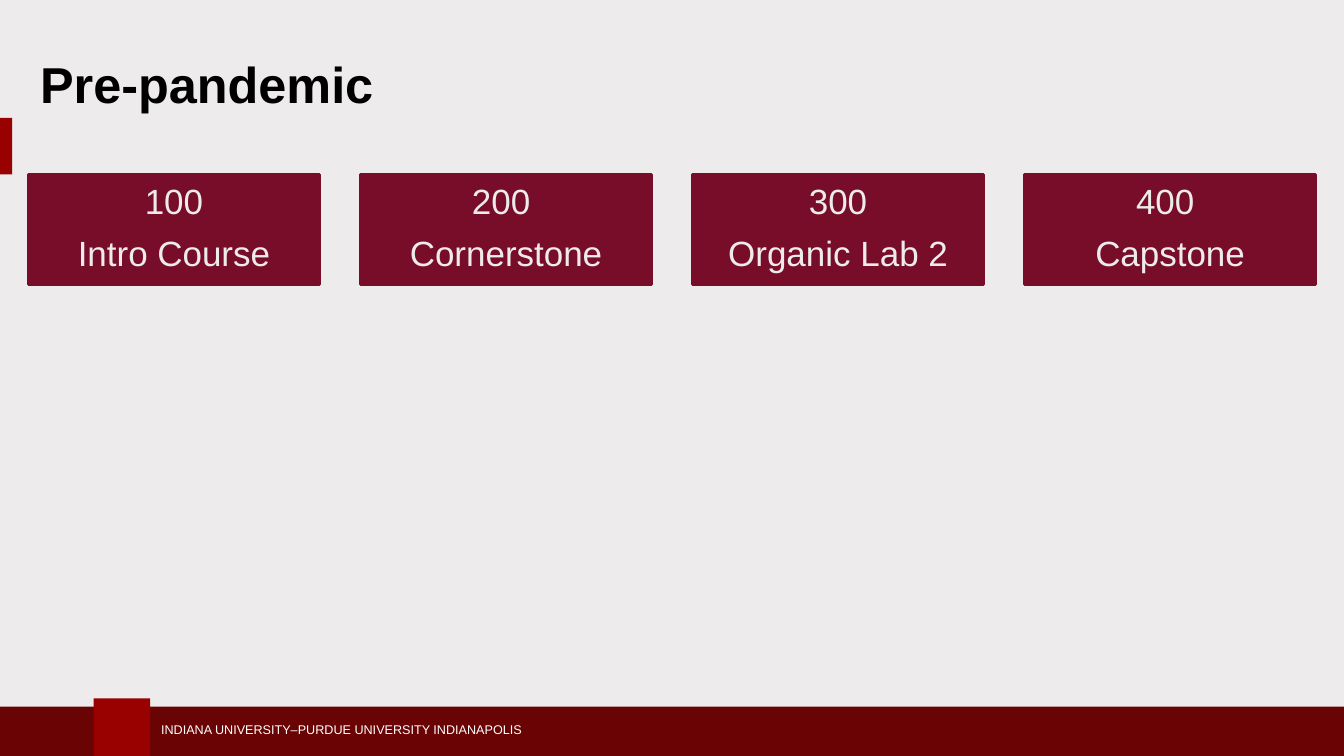
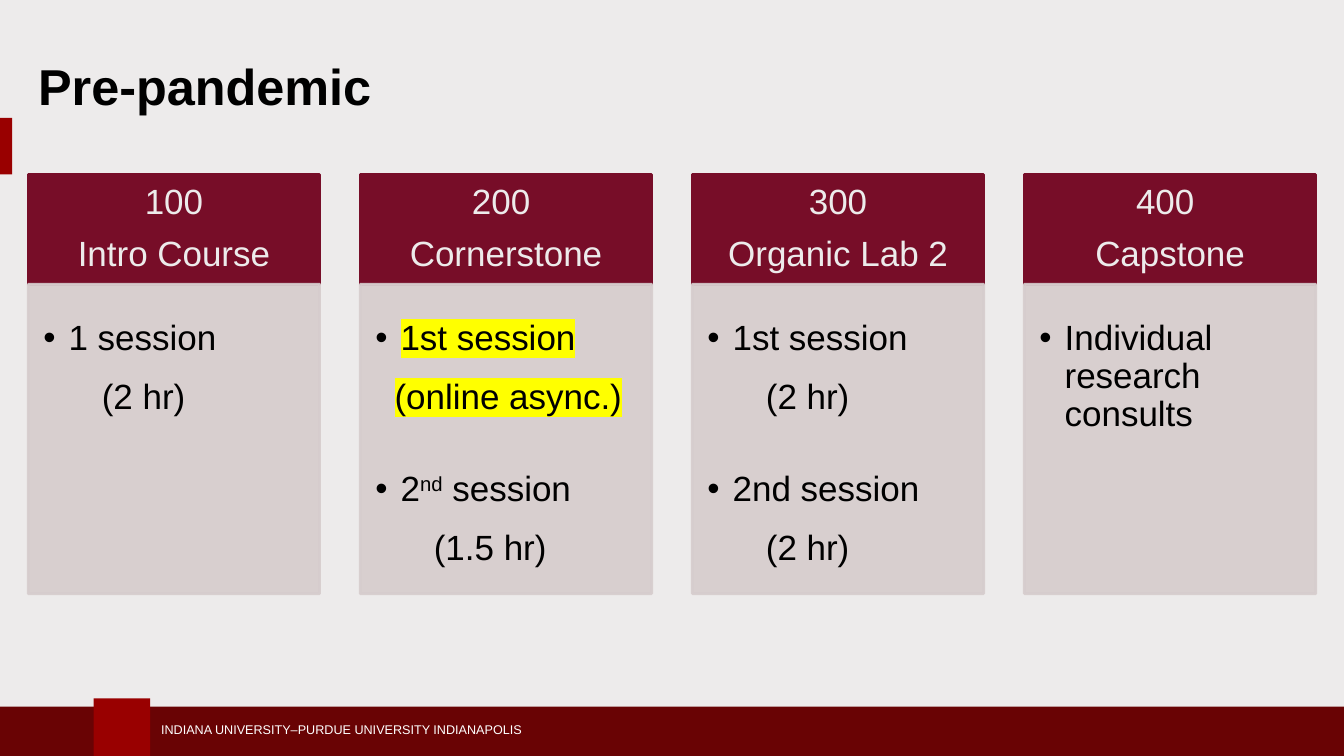
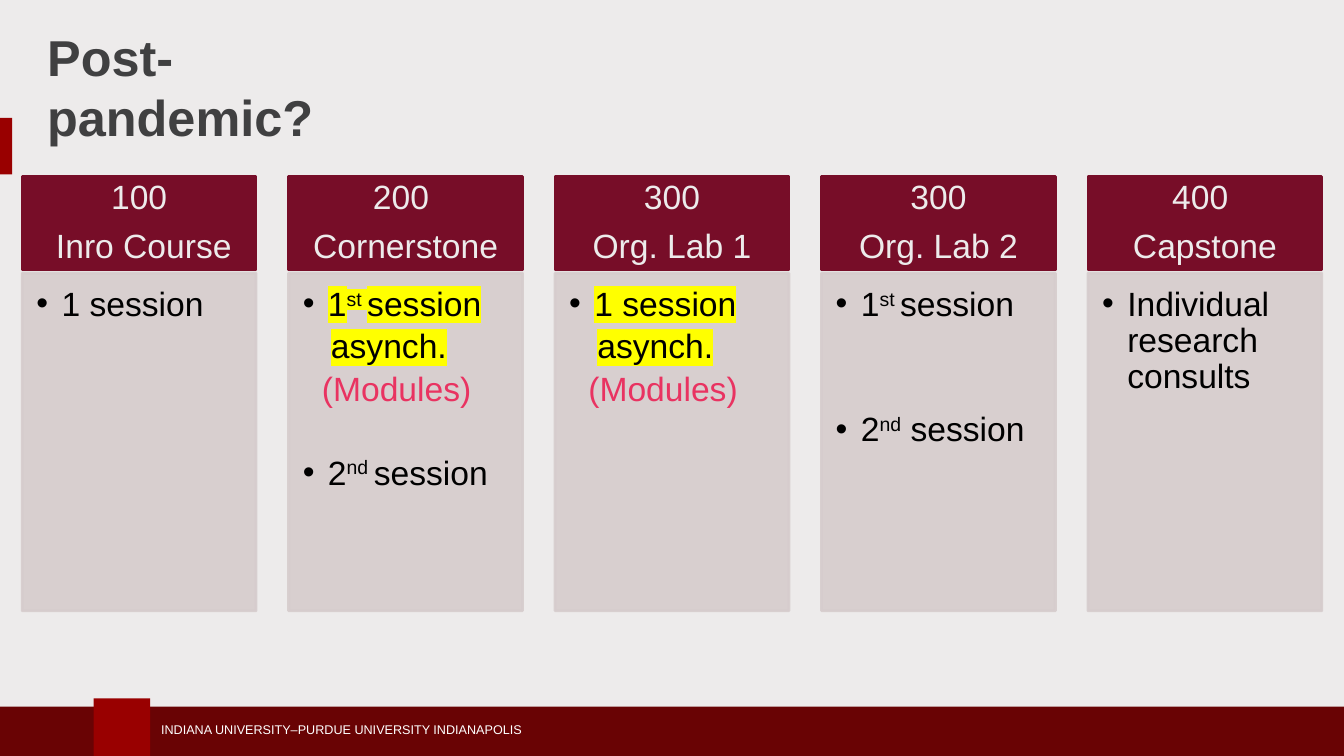
import dataclasses
import pptx
import pptx.dml.color
import pptx.enum.shapes
import pptx.enum.text
import pptx.oxml.ns
import pptx.util
from lxml import etree

SLIDE_WIDTH = 13.33
SLIDE_HEIGHT = 7.5
FONT = "Arial"
PAPER = "EDEBEB"
CRIMSON = "990000"
DARK_RED = "690304"
MAROON = "770D28"
ROSE_GRAY = "D6CCCD"
BLACK = "000000"
CHARCOAL = "404041"
WHITE = "FFFFFF"
YELLOW = "FFFF00"
PINK = "E93361"
BODY_OPACITY = 90
BULLET_INDENT = 0.25
LINE_SPACING = 0.9


@dataclasses.dataclass
class Grid:
    columns: int
    margin: float
    column_width: float
    header_top: float
    header_height: float
    body_top: float
    body_height: float
    body_insets: tuple
    size: int
    header_gap: float

    def left(self, column):
        free = SLIDE_WIDTH - 2 * self.margin - self.columns * self.column_width
        return self.margin + column * (self.column_width + free / (self.columns - 1))


@dataclasses.dataclass
class Run:
    text: str
    color: str = BLACK
    highlight: str = ""
    raised: bool = False
    bold: bool = False


@dataclasses.dataclass
class Line:
    runs: list
    before: float = 0
    indent: float = 0
    bullet: bool = False
    centered: bool = False
    spacing: float = LINE_SPACING


FOUR_COLUMNS = Grid(4, 0.28, 2.89, 1.73, 1.09, 2.82, 3.07, (0.15, 0.36, 0.19, 0.22), 25, 9.8)
FIVE_COLUMNS = Grid(5, 0.22, 2.32, 1.75, 0.93, 2.71, 3.35, (0.14, 0.14, 0.19, 0.21), 24, 9.4)


def rgb(color):
    return pptx.dml.color.RGBColor.from_string(color)


def add_element(parent, tag, **attributes):
    return etree.SubElement(parent, pptx.oxml.ns.qn(tag), attributes)


def add_box(slide, left, top, width, height, fill, outline=False, opacity=100):
    shape = slide.shapes.add_shape(
        pptx.enum.shapes.MSO_SHAPE.RECTANGLE,
        *(pptx.util.Inches(length) for length in (left, top, width, height)))
    shape.shadow.inherit = False
    shape.fill.solid()
    shape.fill.fore_color.rgb = rgb(fill)
    if outline:
        shape.line.color.rgb = rgb(fill)
        shape.line.width = pptx.util.Pt(2)
    else:
        shape.line.fill.background()
    if opacity < 100:
        for color in shape.element.spPr.iter(pptx.oxml.ns.qn("a:srgbClr")):
            add_element(color, "a:alpha", val=str(opacity * 1000))
    return shape


def format_run(run, style, size):
    run.font.size = pptx.util.Pt(size)
    run.font.bold = style.bold
    run.font.color.rgb = rgb(style.color)
    run.font.name = FONT
    properties = run.font._element
    if style.raised:
        properties.set("baseline", "30000")
    if style.highlight:
        highlight = etree.Element(pptx.oxml.ns.qn("a:highlight"))
        add_element(highlight, "a:srgbClr", val=style.highlight)
        properties.find(pptx.oxml.ns.qn("a:latin")).addprevious(highlight)


def write_lines(shape, lines, size, insets, anchor, wrap=True):
    frame = shape.text_frame
    frame.word_wrap = wrap
    frame.vertical_anchor = anchor
    frame.margin_left, frame.margin_top, frame.margin_right, frame.margin_bottom = (
        pptx.util.Inches(inset) for inset in insets)
    frame.text = "\n".join("" for line in lines)
    for paragraph, line in zip(frame.paragraphs, lines):
        alignments = pptx.enum.text.PP_ALIGN
        paragraph.alignment = alignments.CENTER if line.centered else alignments.LEFT
        paragraph.line_spacing = line.spacing
        paragraph.space_before = pptx.util.Pt(line.before)
        properties = paragraph._p.get_or_add_pPr()
        indent = BULLET_INDENT if line.bullet else line.indent
        properties.set("marL", str(pptx.util.Inches(indent)))
        properties.set("indent", str(pptx.util.Inches(-indent if line.bullet else 0)))
        if line.bullet:
            add_element(properties, "a:buFont", typeface=FONT)
            add_element(properties, "a:buChar", char="•")
        for style in line.runs:
            run = paragraph.add_run()
            run.text = style.text
            format_run(run, style, size)


def add_label(slide, text, left, top, width, height, size, color, bold=False, wrap=True):
    box = slide.shapes.add_textbox(
        *(pptx.util.Inches(length) for length in (left, top, width, height)))
    write_lines(box, [Line([Run(text, color, bold=bold)], spacing=1)], size,
                (0.1, 0.05, 0.1, 0.05), pptx.enum.text.MSO_ANCHOR.MIDDLE, wrap)


def add_slide(presentation, title, left, top, color):
    slide = presentation.slides.add_slide(presentation.slide_layouts[6])
    add_box(slide, 0, 1.17, 0.12, 0.56, CRIMSON)
    add_box(slide, 0, 7.01, SLIDE_WIDTH, SLIDE_HEIGHT - 7.01, DARK_RED)
    add_box(slide, 0.93, 6.93, 0.56, SLIDE_HEIGHT - 6.93, CRIMSON)
    add_label(slide, "INDIANA UNIVERSITY–PURDUE UNIVERSITY INDIANAPOLIS",
              1.5, 7.11, 5.27, 0.25, 9, WHITE)
    add_label(slide, title, left, top, 3.54, 0.71, 36, color, bold=True, wrap=False)
    return slide


def add_header(slide, grid, column, level, course):
    box = add_box(slide, grid.left(column), grid.header_top, grid.column_width,
                  grid.header_height, MAROON, outline=True)
    lines = [Line([Run(level, PAPER)], centered=True),
             Line([Run(course, PAPER)], grid.header_gap, centered=True)]
    write_lines(box, lines, grid.size, (0.19, 0.11, 0.19, 0.11),
                pptx.enum.text.MSO_ANCHOR.MIDDLE)


def add_body(slide, grid, column, lines):
    box = add_box(slide, grid.left(column), grid.body_top, grid.column_width,
                  grid.body_height, ROSE_GRAY, outline=True, opacity=BODY_OPACITY)
    write_lines(box, lines, grid.size, grid.body_insets, pptx.enum.text.MSO_ANCHOR.TOP)


def add_courses(slide, grid, courses, bodies=()):
    for column, (level, course) in enumerate(courses):
        add_header(slide, grid, column, level, course)
    for column, lines in enumerate(bodies):
        add_body(slide, grid, column, lines)


def bullet(*runs, before=0):
    return Line(list(runs), before, bullet=True)


def session(text, before=0, highlight=""):
    return bullet(Run(text, highlight=highlight), before=before)


def ordinal(number, suffix, word, before=0, highlight=""):
    return bullet(Run(number, highlight=highlight),
                  Run(suffix, highlight=highlight, raised=True),
                  Run(word, highlight=highlight), before=before)


def duration(text):
    return Line([Run(text)], 14.8, indent=0.58)


def online_modules():
    return [Line([Run("asynch.", highlight=YELLOW)], 4.5, indent=0.28),
            Line([Run("(Modules)", PINK)], 4.5, indent=0.19)]


def main():
    presentation = pptx.Presentation()
    presentation.slide_width = pptx.util.Inches(SLIDE_WIDTH)
    presentation.slide_height = pptx.util.Inches(SLIDE_HEIGHT)
    background = presentation.slide_master.background.fill
    background.solid()
    background.fore_color.rgb = rgb(PAPER)

    earlier_courses = [("100", "Intro Course"), ("200 ", "Cornerstone"),
                       ("300", "Organic Lab 2"), ("400 ", "Capstone")]
    later_courses = [("100", " Inro Course"), ("200 ", "Cornerstone"), ("300", "Org. Lab 1"),
                     ("300", "Org. Lab 2"), ("400 ", "Capstone")]
    consults = [session("Individual research consults")]
    earlier_bodies = [
        [session("1 session"), duration("(2 hr)")],
        [session("1st session", highlight=YELLOW),
         Line([Run("(online async.)", highlight=YELLOW)], 14.8, indent=0.19),
         ordinal("2", "nd", " session", 39), duration("(1.5 hr)")],
        [session("1st session"), duration("(2 hr)"),
         session("2nd session", 39), duration("(2 hr)")],
        consults]
    later_bodies = [
        [session("1 session")],
        [ordinal("1", "st ", "session", highlight=YELLOW), *online_modules(),
         ordinal("2", "nd ", "session", 33.8)],
        [session("1 session", highlight=YELLOW), *online_modules()],
        [ordinal("1", "st ", "session"), ordinal("2", "nd", " session", 63.8)],
        consults]

    slide = add_slide(presentation, "Pre-pandemic", 0.3, 0.47, BLACK)
    add_courses(slide, FOUR_COLUMNS, earlier_courses)
    slide = add_slide(presentation, "Pre-pandemic", 0.28, 0.49, BLACK)
    add_courses(slide, FOUR_COLUMNS, earlier_courses, earlier_bodies)
    slide = add_slide(presentation, "Post-pandemic?", 0.37, 0.5, CHARCOAL)
    add_courses(slide, FIVE_COLUMNS, later_courses, later_bodies)
    presentation.save("out.pptx")


if __name__ == "__main__":
    main()
